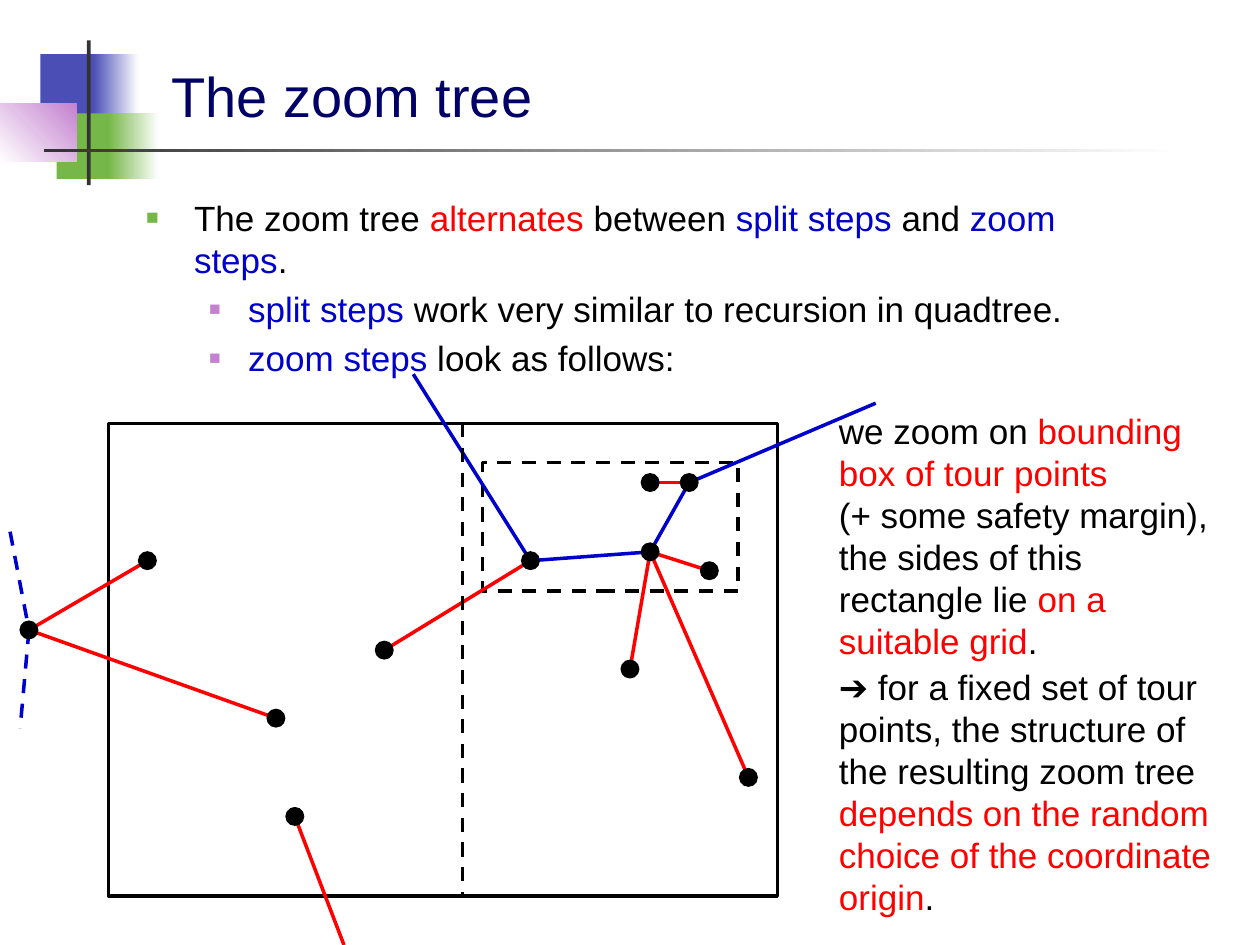
from dataclasses import dataclass
from typing import Optional

import lxml.etree
import pptx
import pptx.dml.color
import pptx.enum.dml
import pptx.enum.shapes
import pptx.enum.text
import pptx.oxml.ns
import pptx.util

Inches = pptx.util.Inches
Pt = pptx.util.Pt
RGBColor = pptx.dml.color.RGBColor
ShapeType = pptx.enum.shapes.MSO_SHAPE

BLACK = RGBColor(0x00, 0x00, 0x00)
WHITE = RGBColor(0xFF, 0xFF, 0xFF)
RED = RGBColor(0xFF, 0x00, 0x00)
BLUE = RGBColor(0x00, 0x00, 0xCC)
NAVY = RGBColor(0x00, 0x00, 0x66)
INDIGO = RGBColor(0x4B, 0x4E, 0xB5)
GREEN = RGBColor(0x76, 0xB7, 0x49)
VIOLET = RGBColor(0xC4, 0x81, 0xCF)
CHARCOAL = RGBColor(0x33, 0x33, 0x33)

FONT = "Arial"
DOT_SIZE = 0.14


@dataclass(frozen=True)
class Box:
    left: float
    top: float
    width: float
    height: float

    def lengths(self) -> tuple:
        return tuple(Inches(value) for value in (self.left, self.top, self.width, self.height))


@dataclass(frozen=True)
class Ornament:
    box: Box
    start: RGBColor
    end: Optional[RGBColor] = None
    angle: float = 0


@dataclass(frozen=True)
class Edge:
    start: tuple
    end: tuple
    color: RGBColor
    dashed: bool = False


@dataclass(frozen=True)
class Bullet:
    level: int
    indent: float
    hanging: float
    color: RGBColor
    percent: int


ORNAMENTS = [
    Ornament(Box(0.32, 0.43, 0.48, 0.52), INDIGO),
    Ornament(Box(0.74, 0.43, 0.36, 0.52), INDIGO, WHITE),
    Ornament(Box(0.45, 0.9, 0.46, 0.52), GREEN),
    Ornament(Box(0.86, 0.9, 0.4, 0.52), GREEN, WHITE),
    Ornament(Box(0, 0.82, 0.61, 0.46), WHITE, VIOLET, 45),
    Ornament(Box(0.69, 0.32, 0.03, 1.15), CHARCOAL),
    Ornament(Box(0.35, 1.18, 9, 0.03), CHARCOAL, WHITE),
]

MIDDLE_LEFT = (3.05, 5.16)
LOWER_MIDDLE = (5, 5.31)
LOWER_RIGHT = (5.94, 6.17)
BOTTOM_LEFT = (2.34, 6.48)
LOWER_LEFT = (2.19, 5.7)
UPPER_LEFT = (1.17, 4.45)
OUTSIDE = (0.23, 5)
TOUR_LEFT = (4.21, 4.45)
TOUR_HUB = (5.16, 4.38)
HUB_NEIGHBOR = (5.63, 4.53)
TOP_NEIGHBOR = (5.16, 3.83)
TOUR_TOP = (5.47, 3.83)

DOTS = [
    MIDDLE_LEFT, LOWER_MIDDLE, LOWER_RIGHT, BOTTOM_LEFT, LOWER_LEFT, UPPER_LEFT,
    OUTSIDE, TOUR_LEFT, TOUR_HUB, HUB_NEIGHBOR, TOP_NEIGHBOR, TOUR_TOP,
]

EDGES = [
    Edge(TOUR_HUB, TOUR_TOP, BLUE),
    Edge((3.28, 2.97), TOUR_LEFT, BLUE),
    Edge(TOUR_LEFT, TOUR_HUB, BLUE),
    Edge(TOUR_TOP, (6.95, 3.2), BLUE),
    Edge(TOP_NEIGHBOR, TOUR_TOP, RED),
    Edge(HUB_NEIGHBOR, TOUR_HUB, RED),
    Edge(MIDDLE_LEFT, TOUR_LEFT, RED),
    Edge(LOWER_RIGHT, TOUR_HUB, RED),
    Edge(LOWER_MIDDLE, TOUR_HUB, RED),
    Edge(UPPER_LEFT, OUTSIDE, RED),
    Edge(LOWER_LEFT, OUTSIDE, RED),
    Edge(BOTTOM_LEFT, (2.73, 7.5), RED),
    Edge(OUTSIDE, (0.16, 5.78), BLUE, True),
    Edge((0.08, 4.22), OUTSIDE, BLUE, True),
]
DIVIDER = Edge((3.67, 3.36), (3.67, 7.11), BLACK, True)

MAIN_BULLET = Bullet(0, 0.38, 0.38, GREEN, 60)
SUB_BULLET = Bullet(1, 0.81, 0.31, VIOLET, 55)
BODY = [
    (MAIN_BULLET, [("The zoom tree ", BLACK), ("alternates ", RED), ("between ", BLACK),
                   ("split steps ", BLUE), ("and ", BLACK), ("zoom steps", BLUE), (".", BLACK)]),
    (SUB_BULLET, [("split steps ", BLUE), ("work very similar to recursion in quadtree.", BLACK)]),
    (SUB_BULLET, [("zoom steps ", BLUE), ("look as follows:", BLACK)]),
]

ZOOM_NOTE = [
    [("we zoom on ", BLACK), ("bounding box of tour points\n", RED),
     ("(+ some safety margin),", BLACK)],
    [("the sides of this rectangle lie ", BLACK), ("on a suitable grid", RED), (".", BLACK)],
]
ORIGIN_NOTE = [
    [("➔ for a fixed set of tour points, the structure of the resulting zoom tree ", BLACK),
     ("depends on the random choice of the coordinate origin", RED), (".", BLACK)],
]


def style_line(line, color: RGBColor, dashed: bool = False, width: float = 2) -> None:
    line.color.rgb = color
    line.width = Pt(width)
    if dashed:
        line.dash_style = pptx.enum.dml.MSO_LINE.DASH


def add_ornament(slide, ornament: Ornament) -> None:
    shape = slide.shapes.add_shape(ShapeType.RECTANGLE, *ornament.box.lengths())
    shape.shadow.inherit = False
    shape.line.fill.background()
    if ornament.end is None:
        shape.fill.solid()
        shape.fill.fore_color.rgb = ornament.start
        return
    shape.fill.gradient()
    shape.fill.gradient_angle = ornament.angle
    for stop, color in zip(shape.fill.gradient_stops, (ornament.start, ornament.end)):
        stop.color.rgb = color


def add_frame(slide, box: Box, dashed: bool = False) -> None:
    shape = slide.shapes.add_shape(ShapeType.RECTANGLE, *box.lengths())
    shape.shadow.inherit = False
    shape.fill.background()
    style_line(shape.line, BLACK, dashed)


def add_edge(slide, edge: Edge) -> None:
    ends = [Inches(value) for value in edge.start + edge.end]
    connector = slide.shapes.add_connector(pptx.enum.shapes.MSO_CONNECTOR.STRAIGHT, *ends)
    style_line(connector.line, edge.color, edge.dashed)
    lxml.etree.SubElement(connector._element.spPr, pptx.oxml.ns.qn("a:effectLst"))


def add_dot(slide, center: tuple) -> None:
    box = Box(center[0] - DOT_SIZE / 2, center[1] - DOT_SIZE / 2, DOT_SIZE, DOT_SIZE)
    shape = slide.shapes.add_shape(ShapeType.OVAL, *box.lengths())
    shape.shadow.inherit = False
    shape.fill.solid()
    shape.fill.fore_color.rgb = BLACK
    style_line(shape.line, BLACK, width=0.75)


def write_runs(paragraph, runs: list) -> None:
    paragraph.font.name = FONT
    paragraph.font.size = Pt(20)
    paragraph.line_spacing = Pt(24)
    for text, color in runs:
        run = paragraph.add_run()
        run.text = text.rstrip("\n")
        run.font.color.rgb = color
        if text.endswith("\n"):
            paragraph.add_line_break()


def apply_bullet(paragraph, bullet: Bullet) -> None:
    qn = pptx.oxml.ns.qn
    paragraph.level = bullet.level
    properties = paragraph._p.get_or_add_pPr()
    properties.set("marL", str(Inches(bullet.indent)))
    properties.set("indent", str(-Inches(bullet.hanging)))
    color = lxml.etree.SubElement(properties, qn("a:buClr"))
    lxml.etree.SubElement(color, qn("a:srgbClr"), val=str(bullet.color))
    lxml.etree.SubElement(properties, qn("a:buSzPct"), val=str(bullet.percent * 1000))
    lxml.etree.SubElement(properties, qn("a:buFont"), typeface=FONT)
    lxml.etree.SubElement(properties, qn("a:buChar"), char="■")


def place(shape, box: Box) -> None:
    shape.left, shape.top, shape.width, shape.height = box.lengths()
    shape.text_frame.auto_size = pptx.enum.text.MSO_AUTO_SIZE.NONE
    shape.text_frame.word_wrap = True


def next_paragraph(frame, index: int):
    return frame.add_paragraph() if index else frame.paragraphs[0]


def fill_title(shape) -> None:
    place(shape, Box(1.26, 0.23, 8.52, 0.84))
    shape.text_frame.vertical_anchor = pptx.enum.text.MSO_ANCHOR.BOTTOM
    shape.text_frame.text = "The zoom tree"
    paragraph = shape.text_frame.paragraphs[0]
    paragraph.alignment = pptx.enum.text.PP_ALIGN.LEFT
    paragraph.font.name = FONT
    paragraph.font.size = Pt(32)
    paragraph.font.color.rgb = NAVY


def fill_body(shape) -> None:
    place(shape, Box(1.06, 1.51, 7.88, 1.39))
    for index, (bullet, runs) in enumerate(BODY):
        paragraph = next_paragraph(shape.text_frame, index)
        apply_bullet(paragraph, bullet)
        paragraph.space_before = Pt(4)
        write_runs(paragraph, runs)


def add_note(slide, box: Box, paragraphs: list) -> None:
    shape = slide.shapes.add_textbox(*box.lengths())
    shape.text_frame.word_wrap = True
    for index, runs in enumerate(paragraphs):
        write_runs(next_paragraph(shape.text_frame, index), runs)


def main() -> None:
    presentation = pptx.Presentation()
    presentation.slide_width, presentation.slide_height = Inches(10), Inches(7.5)
    slide = presentation.slides.add_slide(presentation.slide_layouts[1])
    for ornament in ORNAMENTS:
        add_ornament(slide, ornament)
    fill_title(slide.shapes.title)
    fill_body(slide.placeholders[1])
    add_frame(slide, Box(3.83, 3.67, 2.03, 1.02), dashed=True)
    add_note(slide, Box(6.56, 3.2, 3.2, 2.12), ZOOM_NOTE)
    add_frame(slide, Box(0.86, 3.36, 5.31, 3.75))
    for edge in EDGES:
        add_edge(slide, edge)
    for center in DOTS:
        add_dot(slide, center)
    add_edge(slide, DIVIDER)
    add_note(slide, Box(6.56, 5.23, 3.2, 2.46), ORIGIN_NOTE)
    presentation.save("out.pptx")


if __name__ == "__main__":
    main()
